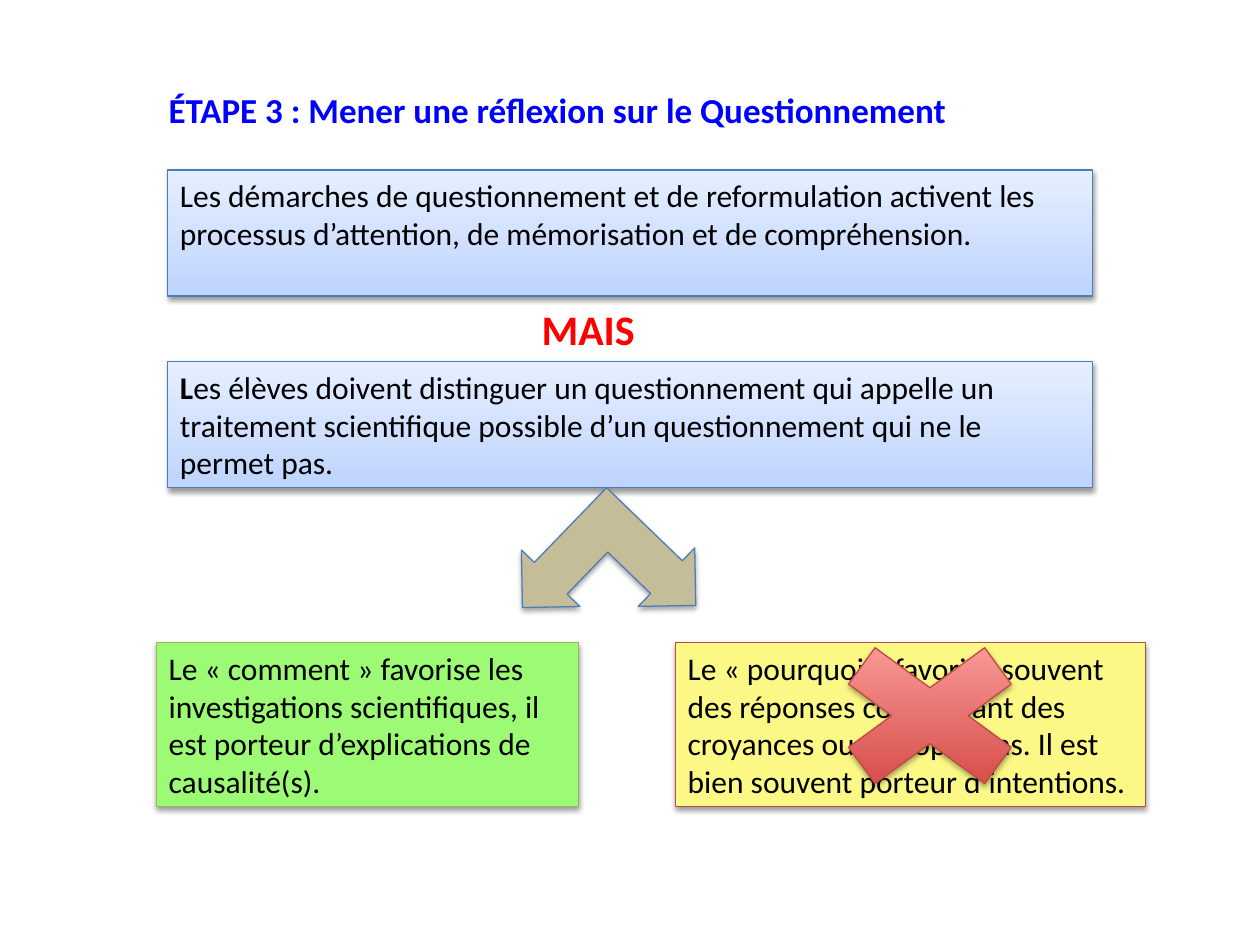
from pptx import Presentation
from pptx.dml.color import RGBColor
from pptx.enum.shapes import MSO_SHAPE
from pptx.enum.text import MSO_ANCHOR, PP_ALIGN
from pptx.oxml import parse_xml
from pptx.oxml.ns import nsdecls, qn
from pptx.util import Inches, Pt

RECTANGLE = MSO_SHAPE.RECTANGLE
SPLIT_ARROW = MSO_SHAPE.LEFT_UP_ARROW
CROSS = MSO_SHAPE.MATH_MULTIPLY
TOP = MSO_ANCHOR.TOP
LEFT = PP_ALIGN.LEFT

BLUE_GRADIENT = ("BFD4FE", "E5EFFF")
RED_GRADIENT = ("D03F3B", "FFA7A4")
BLUE_LINE = "4A7EBB"
RED_LINE = "BE4B48"


def color(value):
    return RGBColor.from_string(value)


def write_text(frame, text, size=18, text_color="000000", bold=False, bold_start=""):
    frame.word_wrap = True
    frame.vertical_anchor = TOP
    paragraph = frame.paragraphs[0]
    paragraph.alignment = LEFT
    for content, is_bold in ((bold_start, True), (text, bold)):
        if content:
            run = paragraph.add_run()
            run.text = content
            run.font.name = "Calibri"
            run.font.size = Pt(size)
            run.font.bold = is_bold
            run.font.color.rgb = color(text_color)


def add_label(slide, left, top, width, height, text, **text_format):
    box = slide.shapes.add_textbox(Inches(left), Inches(top), Inches(width), Inches(height))
    write_text(box.text_frame, text, **text_format)


def add_shadow(shape, opacity, distance):
    shape.shadow.inherit = False
    effects = shape._element.spPr.find(qn("a:effectLst"))
    effects.append(parse_xml(
        f'<a:outerShdw {nsdecls("a")} blurRad="{Pt(3.15)}" dist="{Pt(distance)}" '
        f'dir="5400000" rotWithShape="0"><a:srgbClr val="000000">'
        f'<a:alpha val="{opacity * 1000}"/></a:srgbClr></a:outerShdw>'))


def add_figure(slide, kind, left, top, width, height, fill, line,
               adjustments=(), rotation=0, opacity=35, distance=1.81):
    shape = slide.shapes.add_shape(
        kind, Inches(left), Inches(top), Inches(width), Inches(height))
    for index, value in enumerate(adjustments):
        shape.adjustments[index] = value
    shape.rotation = rotation
    if isinstance(fill, tuple):
        shape.fill.gradient()
        shape.fill.gradient_angle = 90
        for stop, value in zip(shape.fill.gradient_stops, fill):
            stop.color.rgb = color(value)
    else:
        shape.fill.solid()
        shape.fill.fore_color.rgb = color(fill)
    shape.line.color.rgb = color(line)
    shape.line.width = Pt(0.75)
    add_shadow(shape, opacity, distance)
    return shape


def add_panel(slide, left, top, width, height, fill, line, text, **text_format):
    panel = add_figure(slide, RECTANGLE, left, top, width, height, fill, line,
                       opacity=38, distance=1.57)
    write_text(panel.text_frame, text, **text_format)


def main():
    presentation = Presentation()
    presentation.slide_width = Inches(10)
    presentation.slide_height = Inches(7.5)
    slide = presentation.slides.add_slide(presentation.slide_layouts[6])

    add_label(slide, 1.24, 0.65, 7.85, 0.43,
              "ÉTAPE 3 : Mener une réflexion sur le Questionnement",
              size=20, text_color="0000FF", bold=True)
    add_panel(slide, 1.33, 1.35, 7.34, 1, BLUE_GRADIENT, BLUE_LINE,
              "Les démarches de questionnement et de reformulation activent les "
              "processus d’attention, de mémorisation et de compréhension.")
    add_label(slide, 4.2, 2.36, 1.55, 0.5, "MAIS",
              size=24, text_color="FF0000", bold=True)
    add_panel(slide, 1.33, 2.87, 7.34, 1, BLUE_GRADIENT, BLUE_LINE,
              "es élèves doivent distinguer un questionnement qui appelle un traitement "
              "scientifique possible d’un questionnement qui ne le permet pas.",
              bold_start="L")
    add_panel(slide, 1.24, 5.1, 3.35, 1.3, "9DFA75", "98B855",
              "Le « comment » favorise les investigations scientifiques, "
              "il est porteur d’explications de causalité(s).")
    add_panel(slide, 5.36, 5.1, 3.73, 1.3, "FCF885", RED_LINE,
              "Le « pourquoi » favorise souvent des réponses convoquant des croyances "
              "ou des opinions. Il est bien souvent porteur d’intentions.")
    add_figure(slide, SPLIT_ARROW, 4.18, 3.94, 1.3, 1.29, "C4BD97", BLUE_LINE,
               adjustments=(0.28, 0.25, 0.25), rotation=224)
    add_figure(slide, CROSS, 6.34, 4.92, 2.08, 1.52, RED_GRADIENT, RED_LINE,
               adjustments=(0.235,))

    presentation.save("out.pptx")


if __name__ == "__main__":
    main()
